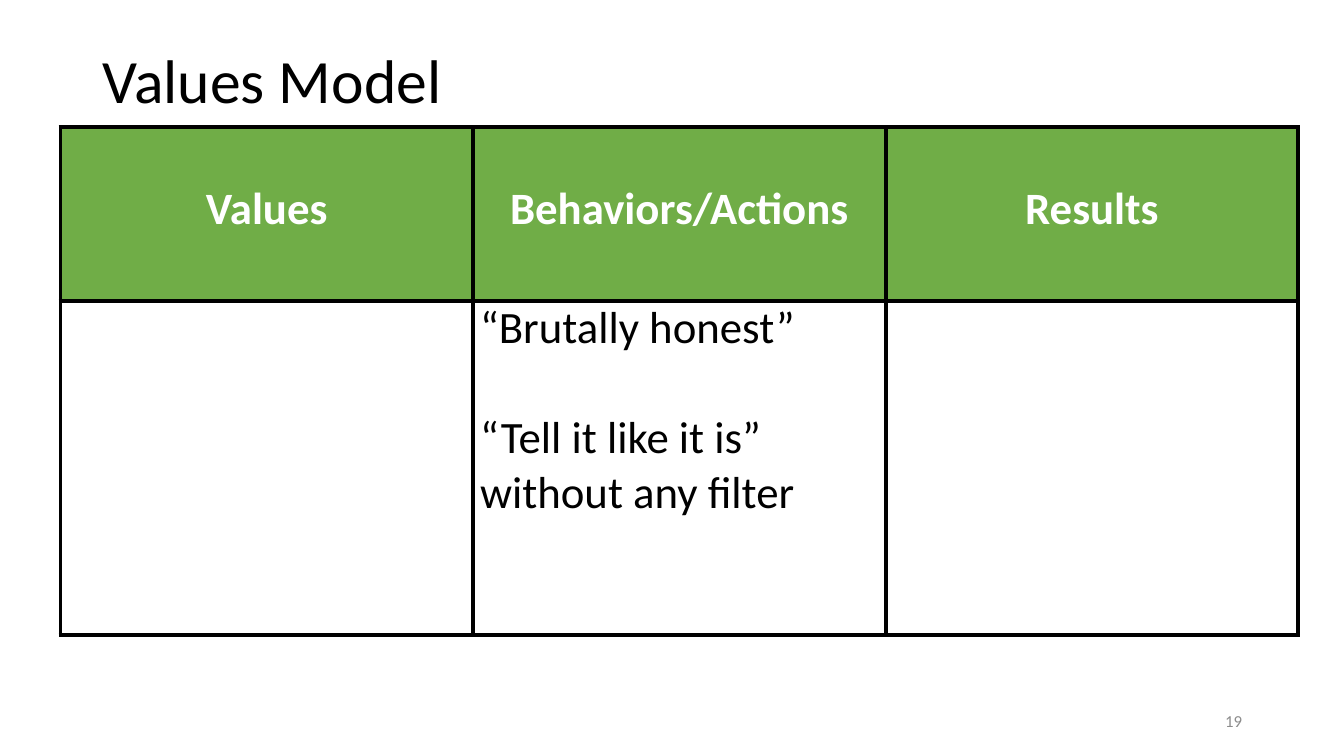
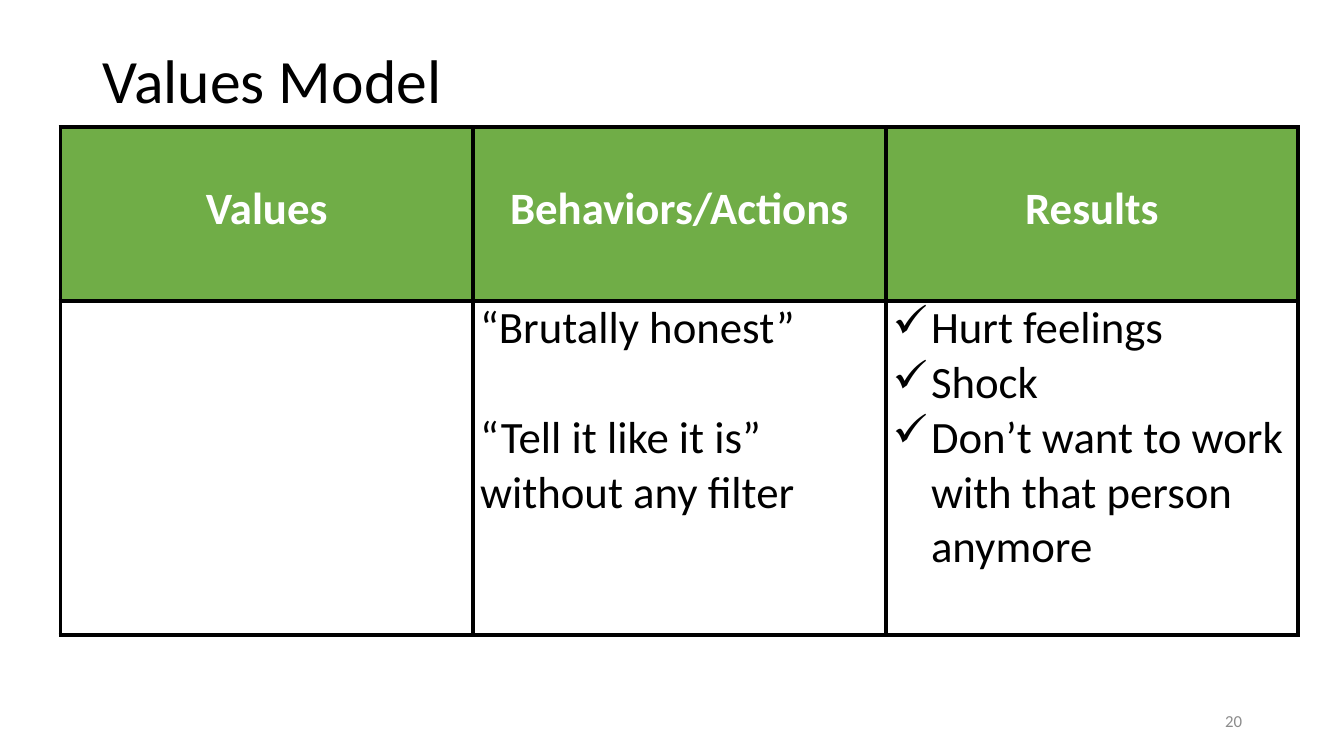
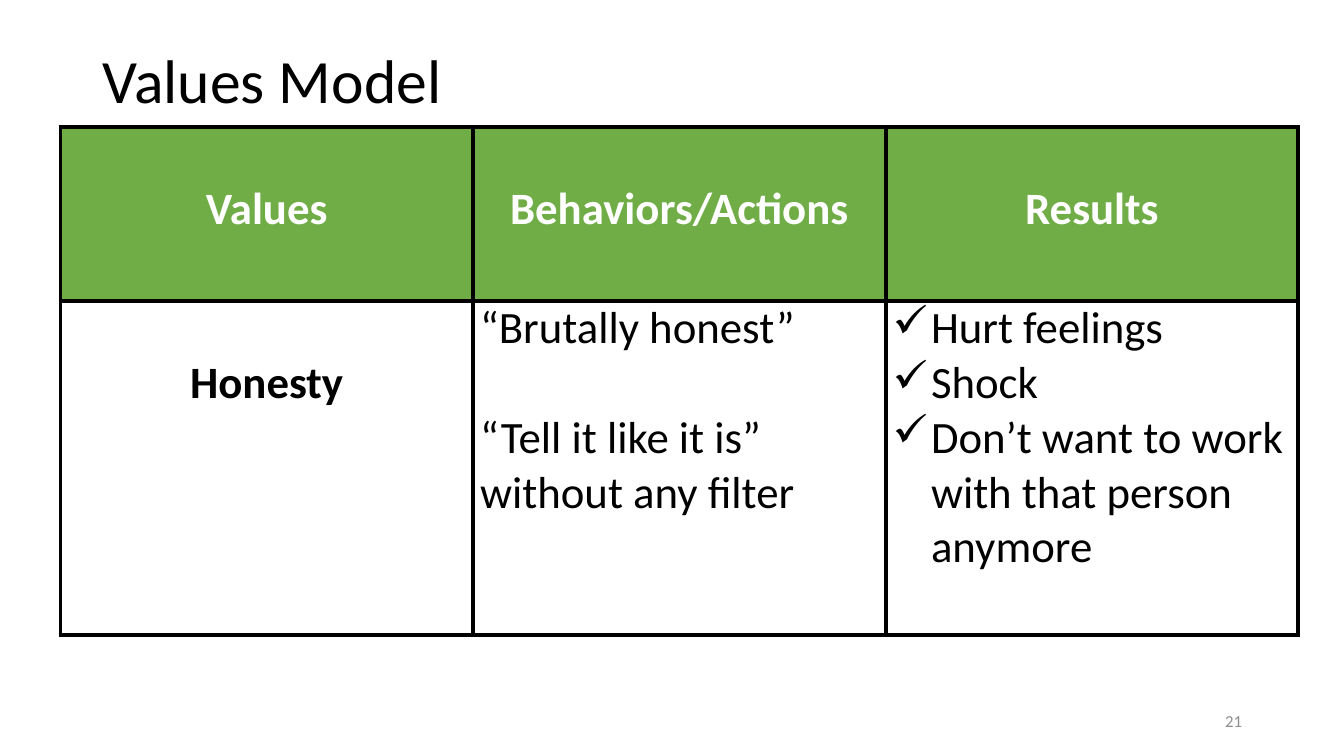
from dataclasses import dataclass

from lxml.etree import SubElement
from pptx import Presentation
from pptx.dml.color import RGBColor
from pptx.enum.text import MSO_ANCHOR, MSO_AUTO_SIZE, PP_ALIGN
from pptx.oxml import parse_xml
from pptx.oxml.ns import nsdecls, qn
from pptx.util import Inches, Pt


@dataclass(frozen=True)
class Theme:
    font: str = "Calibri"
    ink: str = "000000"
    paper: str = "FFFFFF"
    header: str = "70AD47"
    muted: str = "8C8C8C"
    title_size: int = 44
    table_size: int = 32
    number_size: int = 12
    rule: int = 3
    line_height: float = 1.22


THEME = Theme()
HEADINGS = ("Values", "Behaviors/Actions", "Results")
BEHAVIORS = ("“Brutally honest”", "“Tell it like it is” without any filter")
RESULTS = ("Hurt feelings", "Shock", "Don’t want to work with that person anymore")
FIRST_NUMBER = 19


def add_bullet(paragraph, mark, indent):
    properties = paragraph._p.get_or_add_pPr()
    properties.set("marL", str(indent))
    properties.set("indent", str(-indent))
    SubElement(properties, qn("a:buChar")).set("char", mark)


def write(frame, *lines, size, color=THEME.ink, bold=False, align=PP_ALIGN.LEFT,
          gap=0, spacing=None, bullet=None):
    """Fill a text frame with one paragraph a line; gap is the points between them."""
    frame.word_wrap = True
    for index, line in enumerate(lines):
        paragraph = frame.add_paragraph() if index else frame.paragraphs[0]
        if bullet:
            add_bullet(paragraph, bullet, Inches(0.38))
        paragraph.alignment = align
        paragraph.space_before = Pt(gap if index else 0)
        if spacing:
            paragraph.line_spacing = spacing
        run = paragraph.add_run()
        run.text = line
        run.font.name = THEME.font
        run.font.size = Pt(size)
        run.font.bold = bold
        run.font.color.rgb = RGBColor.from_string(color)


def add_borders(cell):
    properties = cell._tc.get_or_add_tcPr()
    for index, side in enumerate(("lnL", "lnR", "lnT", "lnB")):
        properties.insert(index, parse_xml(
            f'<a:{side} {nsdecls("a")} w="{Pt(THEME.rule)}"><a:solidFill>'
            f'<a:srgbClr val="{THEME.ink}"/></a:solidFill></a:{side}>'))


class Deck:
    def __init__(self, theme):
        self.theme = theme
        self.presentation = Presentation()
        self.presentation.slide_width = Inches(13.33)
        self.presentation.slide_height = Inches(7.5)
        self.slide = None

    def area(self, left, top, width, height):
        """Turn percentages of the slide's size into lengths."""
        across = self.presentation.slide_width / 100
        down = self.presentation.slide_height / 100
        return (round(left * across), round(top * down),
                round(width * across), round(height * down))

    def start_slide(self, title):
        layout = self.presentation.slide_layouts.get_by_name("Title Only")
        self.slide = self.presentation.slides.add_slide(layout)
        heading = self.slide.shapes.title
        heading.left, heading.top, heading.width, heading.height = self.area(
            6.9, 5.33, 86.25, 11.47)
        heading.text_frame.auto_size = MSO_AUTO_SIZE.NONE
        heading.text_frame.vertical_anchor = MSO_ANCHOR.MIDDLE
        write(heading.text_frame, title, size=self.theme.title_size, spacing=0.9)

    def values_table(self, value, behaviors, results):
        left, top, width, height = self.area(4.5, 16.8, 92.1, 67.2)
        table = self.slide.shapes.add_table(
            2, len(HEADINGS), left, top, width, height).table
        table.horz_banding = False
        table.rows[0].height = round(height * 0.343)
        table.rows[1].height = height - table.rows[0].height
        for column, heading in enumerate(HEADINGS):
            self.cell(table.cell(0, column), heading, fill=self.theme.header,
                      color=self.theme.paper, bold=True, align=PP_ALIGN.CENTER,
                      lines_above=1)
        self.cell(table.cell(1, 0), *value, bold=True, align=PP_ALIGN.CENTER,
                  lines_above=1)
        self.cell(table.cell(1, 1), *behaviors,
                  gap=self.theme.table_size * self.theme.line_height)
        self.cell(table.cell(1, 2), *results, bullet="✓")

    def cell(self, cell, *lines, fill=None, lines_above=0, **style):
        cell.fill.solid()
        cell.fill.fore_color.rgb = RGBColor.from_string(fill or self.theme.paper)
        add_borders(cell)
        cell.margin_left = cell.margin_right = Inches(0.07)
        cell.margin_top = Pt(lines_above * self.theme.table_size * self.theme.line_height)
        cell.margin_bottom = 0
        cell.vertical_anchor = MSO_ANCHOR.TOP
        write(cell.text_frame, *lines, size=self.theme.table_size, **style)

    def slide_number(self, number):
        footer = self.slide.shapes.add_textbox(*self.area(70.66, 92.67, 22.5, 5.33))
        footer.text_frame.vertical_anchor = MSO_ANCHOR.MIDDLE
        write(footer.text_frame, str(number), size=self.theme.number_size,
              color=self.theme.muted, align=PP_ALIGN.RIGHT)


def main():
    deck = Deck(THEME)
    stages = (
        ((), BEHAVIORS, ()),
        ((), BEHAVIORS, RESULTS),
        (("Honesty",), BEHAVIORS, RESULTS),
    )
    for number, stage in enumerate(stages, FIRST_NUMBER):
        deck.start_slide("Values Model")
        deck.values_table(*stage)
        deck.slide_number(number)
    deck.presentation.save("out.pptx")


if __name__ == "__main__":
    main()
